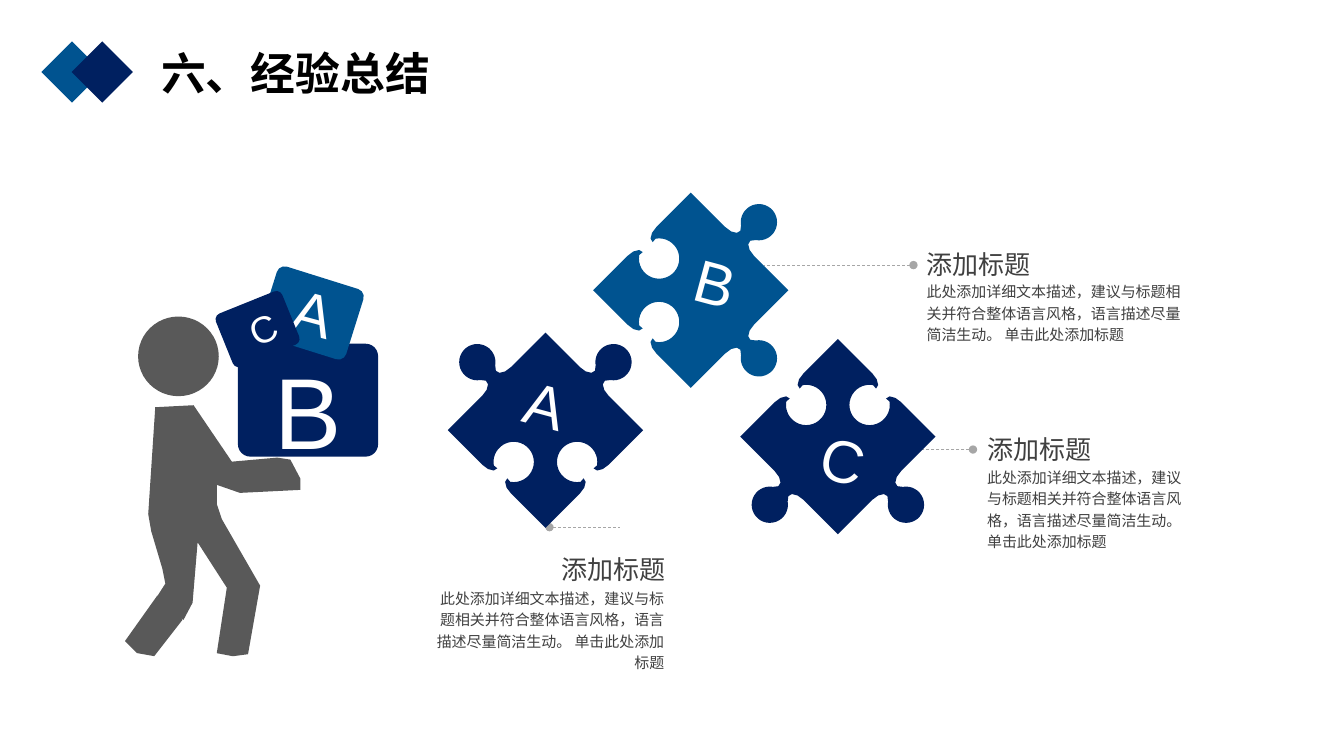
from dataclasses import dataclass
from math import cos, radians, sin

from lxml.etree import SubElement
from pptx import Presentation
from pptx.dml.color import RGBColor
from pptx.enum.dml import MSO_LINE
from pptx.enum.shapes import MSO_CONNECTOR, MSO_SHAPE
from pptx.enum.text import MSO_AUTO_SIZE, PP_ALIGN
from pptx.oxml.ns import qn
from pptx.shapes.autoshape import Shape
from pptx.slide import Slide
from pptx.util import Emu, Pt

PX = 9144  # 100 px to the inch

Point = tuple[float, float]


@dataclass(frozen=True)
class Theme:
    navy: str = "002060"
    blue: str = "005390"
    figure: str = "595959"
    ink: str = "000000"
    text: str = "404040"
    rule: str = "A6A6A6"
    white: str = "FFFFFF"
    latin: str = "Arial"
    chinese: str = "Noto Sans CJK SC"
    title_size: float = 32
    heading_size: float = 18.6
    body_size: float = 10.7
    letter_size: float = 42.6
    large_letter_size: float = 72
    small_letter_size: float = 26.6
    rule_width: float = 0.5


THEME = Theme()


@dataclass(frozen=True)
class Box:
    left: int
    top: int
    width: int
    height: int
    rotation: float = 0

    def lengths(self) -> tuple[Emu, Emu, Emu, Emu]:
        return Emu(self.left * PX), Emu(self.top * PX), Emu(self.width * PX), Emu(self.height * PX)


@dataclass(frozen=True)
class TextStyle:
    size: float
    color: str
    font: str = THEME.latin
    bold: bool = False
    wrap: bool = False
    inset: int | None = None
    space_before: float | None = None
    line_spacing: float | None = None
    align: PP_ALIGN | None = None


@dataclass(frozen=True)
class Letter:
    text: str
    box: Box
    size: float = THEME.letter_size
    wrap: bool = False


@dataclass(frozen=True)
class Crate:
    box: Box
    color: str
    letter: Letter


@dataclass(frozen=True)
class Knob:
    """A round tab (direction 1) or socket (direction -1) on a puzzle edge."""
    direction: int
    distance: int
    radius: int


@dataclass(frozen=True)
class PuzzlePiece:
    center: Point
    turn: int
    color: str
    letter: Letter


@dataclass(frozen=True)
class Callout:
    heading: Box
    body: Box
    dot: tuple[int, int]
    line_end: int
    align: PP_ALIGN | None = None


HEADING = "添加标题"
BODY = "此处添加详细文本描述，建议与标题相关并符合整体语言风格，语言描述尽量简洁生动。 单击此处添加标题"

HEAD = Box(137, 314, 80, 79)
TORSO: list[Point] = [
    (192, 402), (154, 404), (147, 510), (150, 527), (161, 564), (164, 579), (155, 593),
    (182, 615), (191, 598), (196, 538), (225, 583), (215, 648), (231, 651), (246, 649),
    (258, 581), (220, 515), (215, 500), (215, 481), (238, 489), (298, 486), (298, 475),
    (288, 456), (275, 454), (230, 458)]
LOWER_LEG: list[Point] = [(181, 615), (174, 602), (156, 591), (124, 636), (136, 648), (153, 651)]

TAB, SOCKET = Knob(1, 27, 18), Knob(-1, 24, 20)
PUZZLE_HALF = 68.5
FLARE: list[Point] = [(-20, 0), (-13, 1), (-8, 4), (-7, 8)]

CALLOUTS = [
    Callout(Box(912, 239, 374, 45), Box(912, 270, 278, 78), (906, 263), 758),
    Callout(Box(972, 423, 326, 45), Box(972, 454, 218, 100), (965, 446), 895),
    Callout(Box(341, 542, 326, 45), Box(423, 574, 243, 100), (545, 523), 615, PP_ALIGN.RIGHT)]
CRATES = [
    Crate(Box(236, 341, 139, 112), THEME.navy,
          Letter("B", Box(262, 341, 93, 131), THEME.large_letter_size, wrap=True)),
    Crate(Box(264, 274, 90, 73, 17.4), THEME.blue, Letter("A", Box(282, 268, 55, 82, 15.1))),
    Crate(Box(220, 298, 71, 57, 338), THEME.navy,
          Letter("C", Box(238, 300, 40, 55, 335.7), THEME.small_letter_size))]
PUZZLE_PIECES = [
    PuzzlePiece((541, 395), 0, THEME.navy, Letter("A", Box(512, 359, 55, 82, 15.1))),
    PuzzlePiece((717, 288), 90, THEME.blue, Letter("B", Box(680, 238, 53, 82, 15.1))),
    PuzzlePiece((831, 465), 180, THEME.navy, Letter("C", Box(805, 414, 52, 82, 15.1)))]


def paint(shape: Shape, color: str) -> None:
    shape.shadow.inherit = False
    shape.fill.solid()
    shape.fill.fore_color.rgb = RGBColor.from_string(color)
    shape.line.fill.background()


def add_block(slide: Slide, kind: MSO_SHAPE, box: Box, color: str) -> Shape:
    shape = slide.shapes.add_shape(kind, *box.lengths())
    shape.rotation = box.rotation
    paint(shape, color)
    return shape


def add_text(slide: Slide, text: str, box: Box, style: TextStyle) -> None:
    shape = slide.shapes.add_textbox(*box.lengths())
    shape.rotation = box.rotation
    frame = shape.text_frame
    frame.word_wrap = style.wrap
    frame.auto_size = MSO_AUTO_SIZE.SHAPE_TO_FIT_TEXT
    if style.inset is not None:
        inset = Emu(style.inset * PX)
        frame.margin_left = frame.margin_top = frame.margin_right = frame.margin_bottom = inset
    paragraph = frame.paragraphs[0]
    paragraph.alignment = style.align
    paragraph.line_spacing = style.line_spacing
    if style.space_before is not None:
        paragraph.space_before = Pt(style.space_before)
    run = paragraph.add_run()
    run.text = text
    run.font.name = style.font
    run.font.size = Pt(style.size)
    run.font.bold = style.bold
    run.font.color.rgb = RGBColor.from_string(style.color)
    SubElement(run.font._element, qn("a:ea"), typeface=THEME.chinese)


def add_letter(slide: Slide, letter: Letter) -> None:
    add_text(slide, letter.text, letter.box, TextStyle(letter.size, THEME.white, wrap=letter.wrap))


def add_outline(slide: Slide, points: list[Point], color: str) -> Shape:
    start, *rest = [(round(x * PX), round(y * PX)) for x, y in points]
    builder = slide.shapes.build_freeform(*start)
    builder.add_line_segments(rest, close=True)
    shape = builder.convert_to_shape()
    paint(shape, color)
    return shape


def rotate(point: Point, degrees: float) -> Point:
    x, y = point
    cosine, sine = cos(radians(degrees)), sin(radians(degrees))
    return x * cosine - y * sine, x * sine + y * cosine


def knob_profile(knob: Knob) -> list[Point]:
    """Give the points of a knob from left to right: place along the edge, then height."""
    arc = [(-knob.radius * sin(radians(angle)), knob.distance - knob.radius * cos(radians(angle)))
           for angle in range(35, 326, 10)]
    mirrored = [(-along, height) for along, height in reversed(FLARE)]
    return FLARE + arc + mirrored


def puzzle_outline() -> list[Point]:
    """Walk round a square from its top left, centred on the bounds with the tabs."""
    shift = (TAB.distance + TAB.radius) / 2
    points: list[Point] = []
    for side, knob in enumerate((TAB, TAB, SOCKET, SOCKET)):
        edge = [(-PUZZLE_HALF, 0.0)] + knob_profile(knob)
        for along, height in edge:
            x, y = rotate((along, -PUZZLE_HALF - knob.direction * height), side * 90)
            points.append((x - shift, y + shift))
    return points


def add_puzzle_piece(slide: Slide, piece: PuzzlePiece) -> None:
    turned = [rotate(point, piece.turn) for point in puzzle_outline()]
    points = [(piece.center[0] + x, piece.center[1] + y) for x, y in turned]
    add_outline(slide, points, piece.color).rotation = 315
    add_letter(slide, piece.letter)


def add_callout(slide: Slide, callout: Callout) -> None:
    x, y = callout.dot
    connector = slide.shapes.add_connector(
        MSO_CONNECTOR.STRAIGHT, Emu(x * PX), Emu(y * PX), Emu(callout.line_end * PX), Emu(y * PX))
    connector.line.color.rgb = RGBColor.from_string(THEME.rule)
    connector.line.width = Pt(THEME.rule_width)
    connector.line.dash_style = MSO_LINE.DASH
    SubElement(connector.line._get_or_add_ln(), qn("a:headEnd"), type="oval")
    SubElement(connector._element.spPr, qn("a:effectLst"))
    for text, box, size, before, spacing in (
            (HEADING, callout.heading, THEME.heading_size, 2, None),
            (BODY, callout.body, THEME.body_size, 1, 1.2)):
        add_text(slide, text, box, TextStyle(
            size, THEME.text, THEME.chinese, wrap=True, inset=7,
            space_before=before, line_spacing=spacing, align=callout.align))


def main() -> None:
    presentation = Presentation()
    presentation.slide_width, presentation.slide_height = Emu(1333 * PX), Emu(750 * PX)
    slide = presentation.slides.add_slide(presentation.slide_layouts[6])
    for left, color in ((50, THEME.blue), (80, THEME.navy)):
        add_block(slide, MSO_SHAPE.RECTANGLE, Box(left, 50, 43, 43, 45), color)
    add_text(slide, "六、经验总结", Box(150, 40, 287, 64),
             TextStyle(THEME.title_size, THEME.ink, bold=True))
    for callout in CALLOUTS:
        add_callout(slide, callout)
    add_block(slide, MSO_SHAPE.OVAL, HEAD, THEME.figure)
    for outline in (TORSO, LOWER_LEG):
        add_outline(slide, outline, THEME.figure)
    for crate in CRATES:
        add_block(slide, MSO_SHAPE.ROUNDED_RECTANGLE, crate.box, crate.color).adjustments[0] = 0.11
        add_letter(slide, crate.letter)
    for piece in PUZZLE_PIECES:
        add_puzzle_piece(slide, piece)
    presentation.save("out.pptx")


if __name__ == "__main__":
    main()
